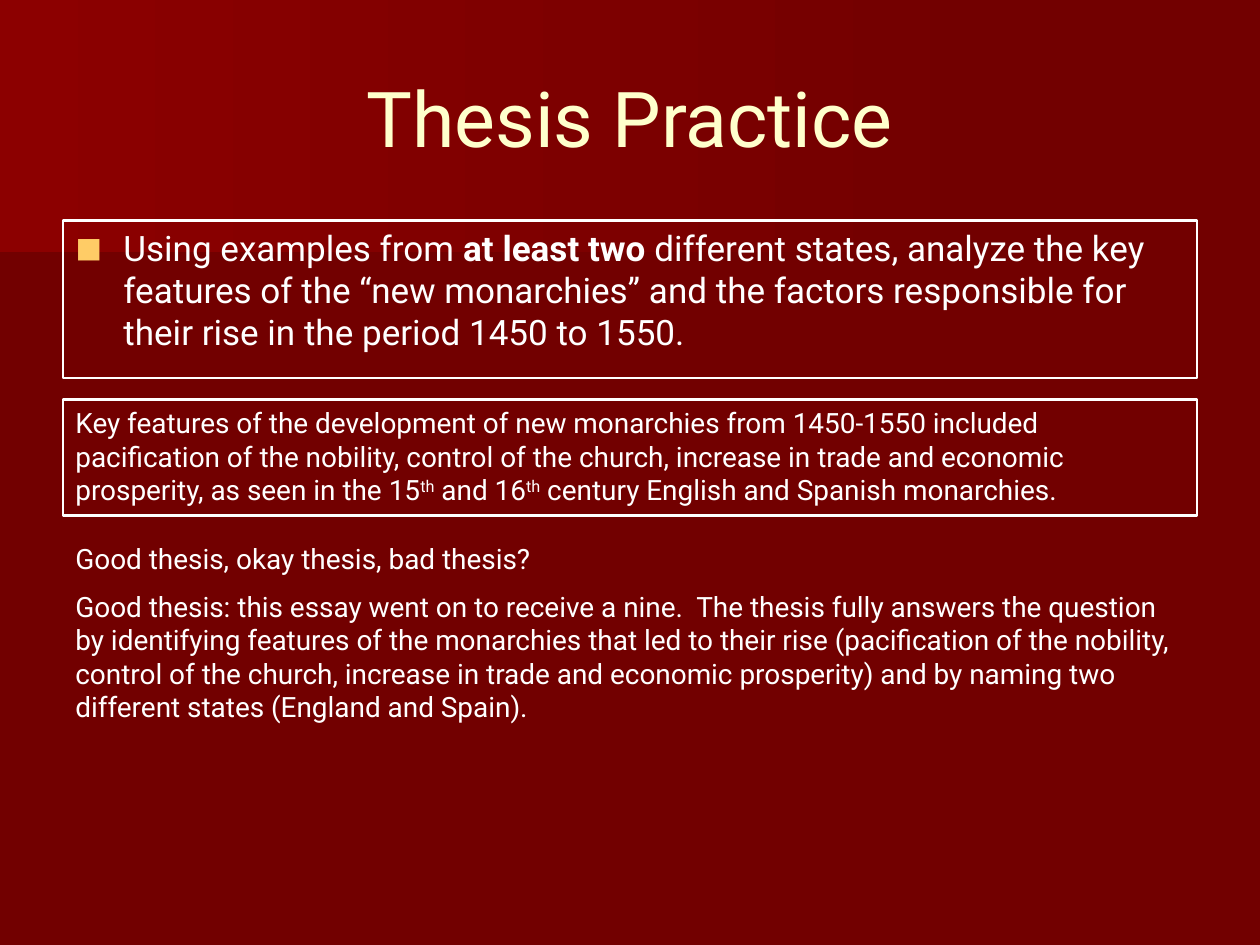
from dataclasses import dataclass

from lxml import etree
from pptx import Presentation
from pptx import util as u
from pptx.dml.color import RGBColor
from pptx.enum import text
from pptx.oxml.ns import qn


@dataclass(frozen=True)
class Theme:
    font: str = "Roboto"
    background: str = "720000"
    glow: str = "8C0000"
    shade: str = "6F0000"
    title: str = "FFFFCC"
    ink: str = "FFFFFF"
    bullet: str = "FFCC66"
    title_size: int = 44
    prompt_size: int = 20
    note_size: int = 16
    rule: float = 1.5


THEME = Theme()
WIDTH, HEIGHT = 10, 7.5
MARGIN, CONTENT = 0.05, 0.9  # shares of the slide width


def row(top, height):
    """Full content-width box; top and height are in inches of the slide."""
    return [u.Inches(n) for n in (MARGIN * WIDTH, top, CONTENT * WIDTH, height)]


def place(shape, box):
    shape.left, shape.top, shape.width, shape.height = box


def outline(shape):
    shape.line.color.rgb = RGBColor.from_string(THEME.ink)
    shape.line.width = u.Pt(THEME.rule)


def write(frame, paragraphs, size, color, gap=0, align=text.PP_ALIGN.LEFT,
          anchor=text.MSO_ANCHOR.TOP):
    """Each paragraph is a list of (wording, style); style is '', 'bold' or 'super'."""
    settings = {"word_wrap": True, "auto_size": text.MSO_AUTO_SIZE.NONE,
                "vertical_anchor": anchor}
    for name, value in settings.items():
        setattr(frame, name, value)
    for index, parts in enumerate(paragraphs):
        paragraph = frame.add_paragraph() if index else frame.paragraphs[0]
        paragraph.alignment = align
        paragraph.space_before = u.Pt(gap if index else 0)
        for wording, style in parts:
            run = paragraph.add_run()
            run.text = wording
            font = {"name": THEME.font, "size": u.Pt(size), "bold": style == "bold"}
            for name, value in font.items():
                setattr(run.font, name, value)
            run.font.color.rgb = RGBColor.from_string(color)
            if style == "super":
                run.font._element.set("baseline", "30000")


def add_bullet(paragraph):
    properties = paragraph._p.get_or_add_pPr()
    indent = u.Inches(0.38)
    properties.set("marL", str(indent))
    properties.set("indent", str(-indent))
    color = etree.SubElement(properties, qn("a:buClr"))
    etree.SubElement(color, qn("a:srgbClr"), val=THEME.bullet)
    etree.SubElement(properties, qn("a:buSzPct"), val="80000")
    etree.SubElement(properties, qn("a:buFont"), typeface=THEME.font)
    etree.SubElement(properties, qn("a:buChar"), char="■")


def backdrop(slide):
    fill = slide.background.fill
    fill.solid()
    fill.fore_color.rgb = RGBColor.from_string(THEME.background)
    panels = [
        (THEME.shade, [(7.78, 1.53), (0, 2.17), (0, 1.01), (7.79, 1.01), (7.78, 1.28)]),
        (THEME.glow, [(7.92, 1.62), (0, 2.08), (0, 0), (7.92, 0)]),
    ]
    for depth, (start, points) in enumerate(panels):
        builder = slide.shapes.build_freeform(*points[0], scale=u.Inches(1))
        builder.add_line_segments(points[1:], close=True)
        panel = builder.convert_to_shape()
        panel.shadow.inherit = False
        panel.line.fill.background()
        panel.fill.gradient()
        panel.fill.gradient_angle = 0
        for stop, color in zip(panel.fill.gradient_stops, (start, THEME.background)):
            stop.color.rgb = RGBColor.from_string(color)
        # Send behind the placeholders, keeping panel order
        panel.element.getparent().insert(2 + depth, panel.element)


def heading(slide, box):
    title = slide.shapes.title
    place(title, box)
    write(title.text_frame, [[("Thesis Practice", "")]], THEME.title_size, THEME.title,
          align=text.PP_ALIGN.CENTER, anchor=text.MSO_ANCHOR.MIDDLE)


def prompt(slide, box):
    question = slide.placeholders[1]
    place(question, box)
    outline(question)
    write(question.text_frame, [[
        ("Using examples from ", ""),
        ("at least two", "bold"),
        (" different states, analyze the key features of the “new monarchies” and the "
         "factors responsible for their rise in the period 1450 to 1550.", ""),
    ]], THEME.prompt_size, THEME.ink)
    add_bullet(question.text_frame.paragraphs[0])


def note(slide, box, paragraphs, framed=False):
    remark = slide.shapes.add_textbox(*box)
    if framed:
        outline(remark)
    write(remark.text_frame, paragraphs, THEME.note_size, THEME.ink,
          gap=THEME.note_size / 2)


def main():
    deck = Presentation()
    deck.slide_width, deck.slide_height = u.Inches(WIDTH), u.Inches(HEIGHT)
    slide = deck.slides.add_slide(deck.slide_layouts[1])

    backdrop(slide)
    heading(slide, row(0.3, 1.25))
    prompt(slide, row(1.75, 1.25))

    # Sample thesis
    note(slide, row(3.17, 0.92), [[
        ("Key features of the development of new monarchies from 1450-1550 included "
         "pacification of the nobility, control of the church, increase in trade and "
         "economic prosperity, as seen in the 15", ""),
        ("th", "super"),
        (" and 16", ""),
        ("th", "super"),
        (" century English and Spanish monarchies.", ""),
    ]], framed=True)

    # Verdict
    note(slide, row(4.25, 1.57), [
        [("Good thesis, okay thesis, bad thesis?", "")],
        [("Good thesis: this essay went on to receive a nine.  The thesis fully answers "
          "the question by identifying features of the monarchies that led to their rise "
          "(pacification of the nobility, control of the church, increase in trade and "
          "economic prosperity) and by naming two different states (England and Spain).",
          "")],
    ])
    deck.save("out.pptx")


if __name__ == "__main__":
    main()
